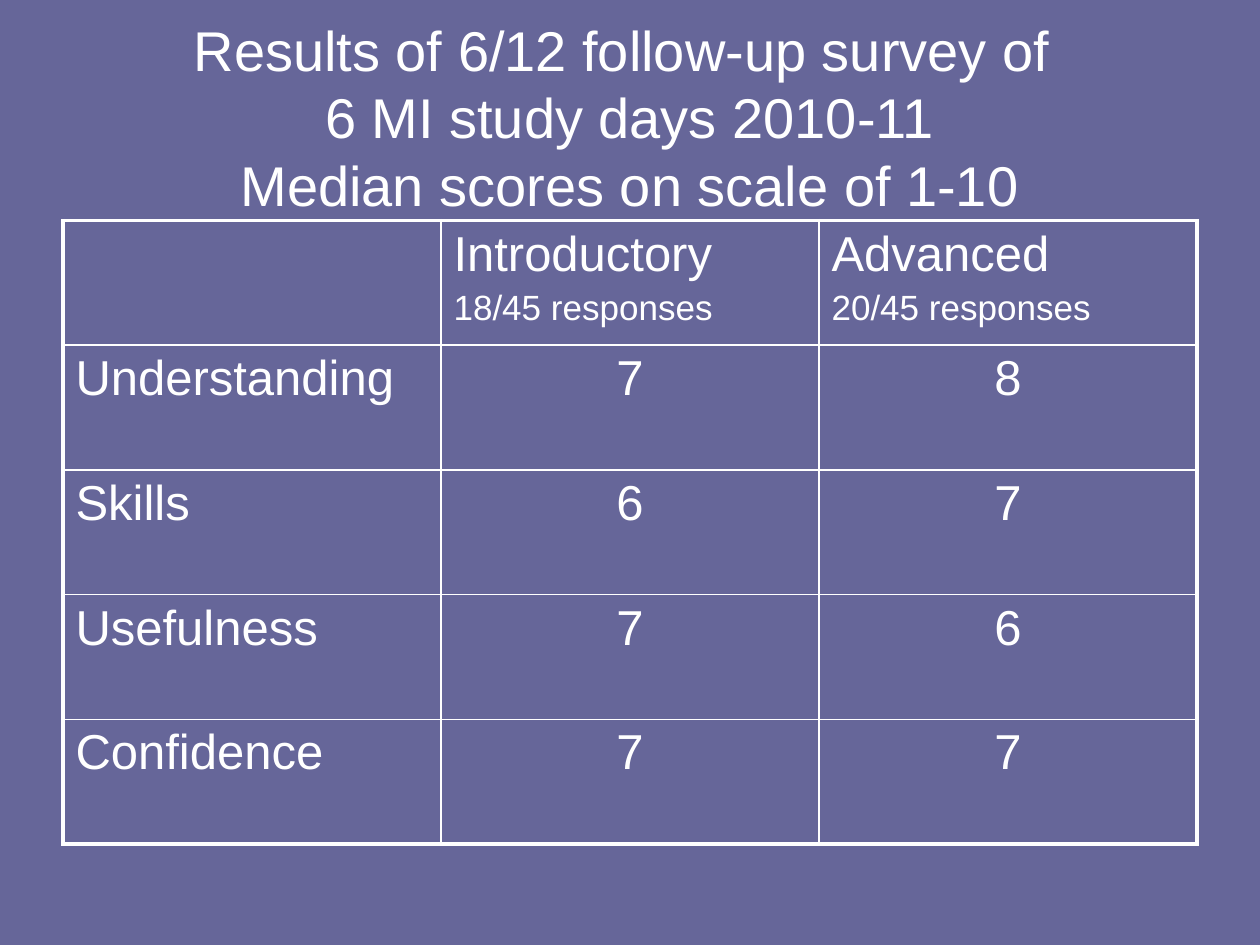
from pptx import Presentation
from pptx.dml.color import RGBColor
from pptx.enum import text
from pptx.oxml import parse_xml
from pptx.oxml.ns import nsdecls
from pptx.util import Pt

TITLE = ["Results of 6/12 follow-up survey of ",
         "6 MI study days 2010-11",
         "Median scores on scale of 1-10"]
GROUPS = [("Introductory", "18/45 responses"), ("Advanced", "20/45 responses")]
SCORES = [("Understanding", 7, 8),
          ("Skills", 6, 7),
          ("Usefulness", 7, 6),
          ("Confidence", 7, 7)]

THEME = {"font": "Arial", "back": "666699", "ink": "FFFFFF",
         "title": 32, "body": 28, "note": 20, "outer": 2.25, "inner": 1}
LEFT, WIDTH = 36, 648
TITLE_TOP, TITLE_HEIGHT = 21.6, 90
TABLE_TOP, TABLE_HEIGHT = 126, 356.4


def style(para, size, align=text.PP_ALIGN.LEFT):
    para.alignment = align
    para.font.name = THEME["font"]
    para.font.size = Pt(size)
    para.font.color.rgb = RGBColor.from_string(THEME["ink"])


def set_borders(cell, widths):
    """Draw the left, right, top and bottom borders, in that order."""
    props = cell._tc.get_or_add_tcPr()
    for index, (side, width) in enumerate(zip("LRTB", widths)):
        props.insert(index, parse_xml(
            f'<a:ln{side} {nsdecls("a")} w="{Pt(width)}"><a:solidFill>'
            f'<a:srgbClr val="{THEME["ink"]}"/></a:solidFill></a:ln{side}>'))


def add_title(page):
    box = page.shapes.add_textbox(Pt(LEFT), Pt(TITLE_TOP), Pt(WIDTH), Pt(TITLE_HEIGHT))
    frame = box.text_frame
    frame.word_wrap = True
    frame.vertical_anchor = text.MSO_ANCHOR.MIDDLE
    para = frame.paragraphs[0]
    para.text = "\v".join(TITLE)
    style(para, THEME["title"], text.PP_ALIGN.CENTER)


def add_score_table(page):
    rows = [("", *("\n".join(group) for group in GROUPS)), *SCORES]
    last_row, last_col = len(rows) - 1, len(GROUPS)
    table = page.shapes.add_table(len(rows), last_col + 1, Pt(LEFT), Pt(TABLE_TOP),
                                  Pt(WIDTH), Pt(TABLE_HEIGHT)).table
    table.first_row = table.horz_banding = False
    for r, row in enumerate(rows):
        for c, value in enumerate(row):
            cell = table.cell(r, c)
            cell.text = str(value)
            cell.fill.background()
            align = text.PP_ALIGN.CENTER if r and c else text.PP_ALIGN.LEFT
            first, *notes = cell.text_frame.paragraphs
            style(first, THEME["body"], align)
            for note in notes:
                style(note, THEME["note"], align)
                note.space_before = Pt(0.2 * THEME["note"])
            on_edge = (c == 0, c == last_col, r == 0, r == last_row)
            set_borders(cell, [THEME["outer" if edge else "inner"] for edge in on_edge])


def main():
    deck = Presentation()
    deck.slide_width, deck.slide_height = Pt(720), Pt(540)
    page = deck.slides.add_slide(deck.slide_layouts[6])
    page.background.fill.solid()
    page.background.fill.fore_color.rgb = RGBColor.from_string(THEME["back"])
    add_title(page)
    add_score_table(page)
    deck.save("out.pptx")


if __name__ == "__main__":
    main()
